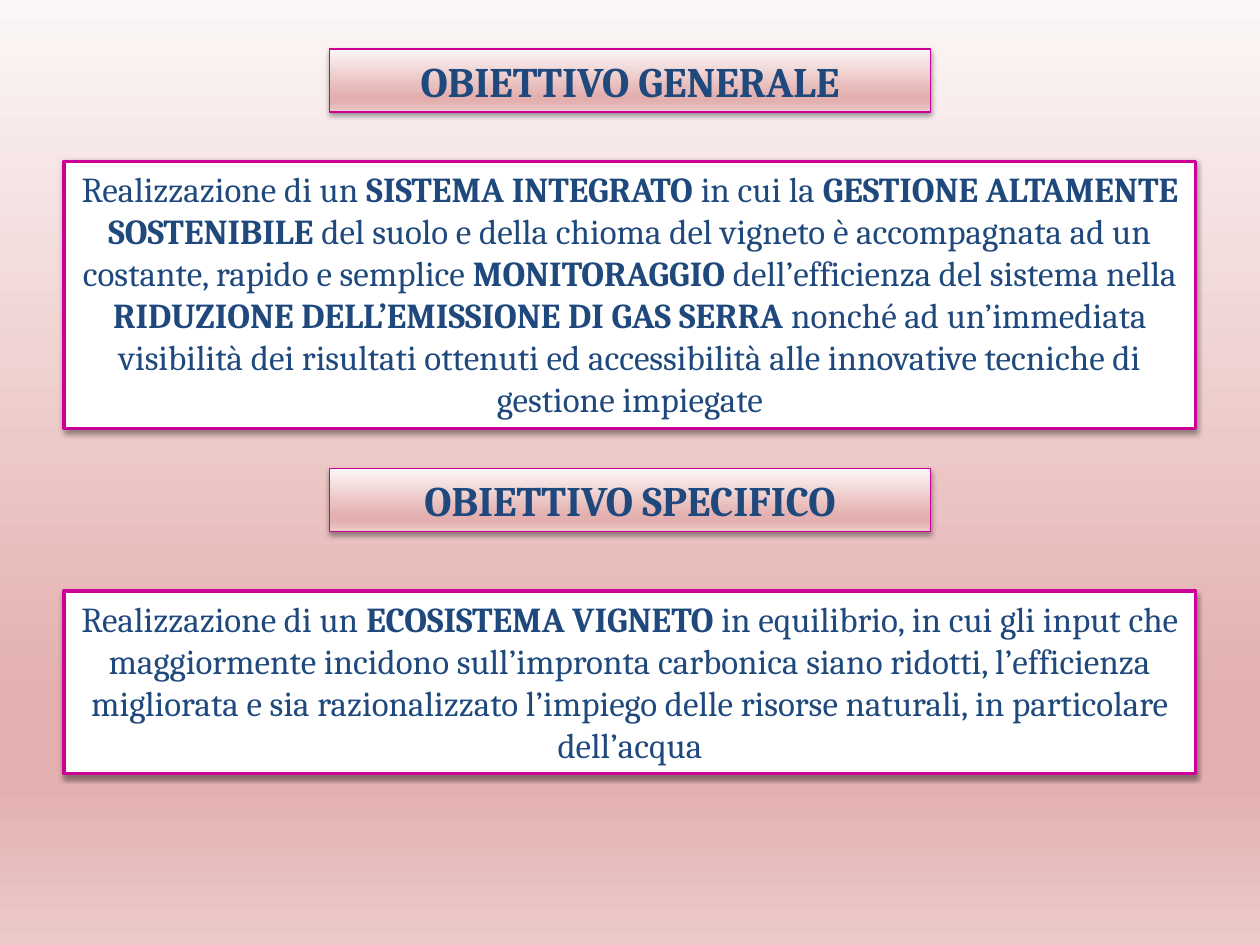
from lxml import etree
from pptx import Presentation, util as u
from pptx.dml.color import RGBColor
from pptx.enum import shapes, text
from pptx.oxml.ns import qn

COLORS = {"ink": "1F497D", "border": "CC0099", "panel": "FFFFFF", "shadow": "000000"}
GRADIENT = [(0, "FCF6F6"), (74, "E3B0AF"), (83, "E3B0AF"), (100, "ECCACA")]
FONT = "Cambria"
SLIDE_WIDTH, SLIDE_HEIGHT = 10, 7.5

HEADING = {"width": 4.77, "size": 24, "line": 0.75, "gradient": True}
PANEL = {"width": 8.98, "size": 20, "line": 2, "gradient": False}

BLOCKS = [
    (HEADING, 0.39, 0.5, [("OBIETTIVO GENERALE", True)]),
    (PANEL, 1.28, 2.12, [
        ("Realizzazione di un ", False),
        ("SISTEMA INTEGRATO", True),
        (" in cui la ", False),
        ("GESTIONE ALTAMENTE SOSTENIBILE", True),
        (" del suolo e della chioma del vigneto è accompagnata ad un costante, "
         "rapido e semplice ", False),
        ("MONITORAGGIO", True),
        (" dell’efficienza del sistema nella ", False),
        ("RIDUZIONE DELL’EMISSIONE DI GAS SERRA", True),
        (" nonché ad un’immediata visibilità dei risultati ottenuti ed accessibilità "
         "alle innovative tecniche di gestione impiegate", False),
    ]),
    (HEADING, 3.72, 0.5, [("OBIETTIVO SPECIFICO", True)]),
    (PANEL, 4.69, 1.45, [
        ("Realizzazione di un ", False),
        ("ECOSISTEMA VIGNETO ", True),
        ("in equilibrio, in cui gli input che maggiormente incidono sull’impronta "
         "carbonica siano ridotti, l’efficienza migliorata e sia razionalizzato "
         "l’impiego delle risorse naturali, in particolare dell’acqua", False),
    ]),
]


def rgb(name):
    return RGBColor.from_string(COLORS[name])


def add_color(parent, value):
    return etree.SubElement(parent, qn("a:srgbClr"), val=value)


def paint_gradient(fill, owner):
    fill.gradient()
    fill.gradient_angle = 270
    stops = owner.find(".//" + qn("a:gsLst"))
    for stop in list(stops):
        stops.remove(stop)
    for position, value in GRADIENT:
        add_color(etree.SubElement(stops, qn("a:gs"), pos=str(position * 1000)), value)


def add_shadow(box):
    box.shadow.inherit = False
    effects = box._element.spPr.find(qn("a:effectLst"))
    shadow = etree.SubElement(effects, qn("a:outerShdw"), blurRad=str(u.Pt(3.1)),
                              dist=str(u.Pt(1.6)), dir="5400000", rotWithShape="0")
    etree.SubElement(add_color(shadow, COLORS["shadow"]), qn("a:alpha"), val="38000")


def add_block(page, style, top, height, runs):
    left = (SLIDE_WIDTH - style["width"]) / 2
    box = page.shapes.add_shape(
        shapes.MSO_SHAPE.RECTANGLE, u.Inches(left), u.Inches(top),
        u.Inches(style["width"]), u.Inches(height))
    if style["gradient"]:
        paint_gradient(box.fill, box._element)
    else:
        box.fill.solid()
        box.fill.fore_color.rgb = rgb("panel")
    box.line.color.rgb = rgb("border")
    box.line.width = u.Pt(style["line"])
    add_shadow(box)

    frame = box.text_frame
    frame.word_wrap = True
    frame.auto_size = text.MSO_AUTO_SIZE.SHAPE_TO_FIT_TEXT
    frame.vertical_anchor = text.MSO_ANCHOR.TOP
    para = frame.paragraphs[0]
    para.alignment = text.PP_ALIGN.CENTER
    for words, bold in runs:
        span = para.add_run()
        span.text = words
        span.font.name = FONT
        span.font.size = u.Pt(style["size"])
        span.font.bold = bold
        span.font.color.rgb = rgb("ink")


def main():
    deck = Presentation()
    deck.slide_width = u.Inches(SLIDE_WIDTH)
    deck.slide_height = u.Inches(SLIDE_HEIGHT)
    page = deck.slides.add_slide(deck.slide_layouts[6])
    paint_gradient(page.background.fill, page._element)
    for block in BLOCKS:
        add_block(page, *block)
    deck.save("out.pptx")


if __name__ == "__main__":
    main()
